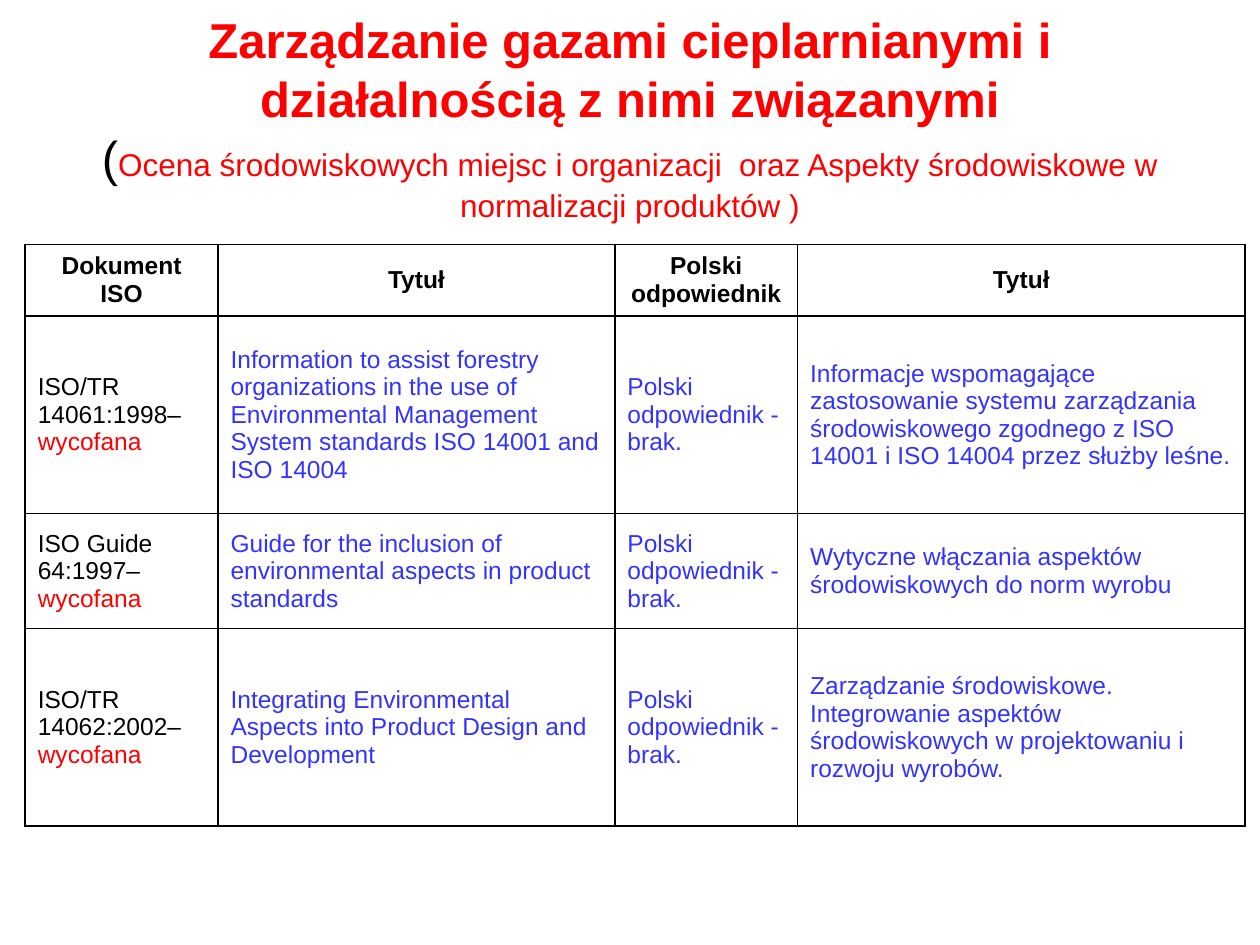
from lxml import etree
from pptx import Presentation
from pptx.dml.color import RGBColor
from pptx.enum.text import MSO_ANCHOR, PP_ALIGN
from pptx.oxml.ns import qn
from pptx.util import Inches, Pt

BLACK = RGBColor(0x00, 0x00, 0x00)
RED = RGBColor(0xFF, 0x00, 0x00)
BLUE = RGBColor(0x33, 0x33, 0xFF)
FONT = "Arial"

TITLE = "Zarządzanie gazami cieplarnianymi i działalnością z nimi związanymi"
SUBTITLE = ("Ocena środowiskowych miejsc i organizacji  oraz Aspekty "
            "środowiskowe w normalizacji produktów )")

HEADERS = ["Dokument ISO", "Tytuł", "Polski odpowiednik", "Tytuł"]
STATUS = "wycofana"
EQUIVALENT = "Polski odpowiednik - brak."
STANDARDS = [
    ("ISO/TR 14061:1998– ",
     "Information to assist forestry organizations in the use of Environmental "
     "Management System standards ISO 14001 and ISO 14004",
     "Informacje wspomagające zastosowanie systemu zarządzania środowiskowego "
     "zgodnego z ISO 14001 i ISO 14004 przez służby leśne."),
    ("ISO Guide 64:1997– ",
     "Guide for the inclusion of environmental aspects in product standards",
     "Wytyczne włączania aspektów środowiskowych do norm wyrobu"),
    ("ISO/TR 14062:2002– ",
     "Integrating Environmental Aspects into Product Design and Development",
     "Zarządzanie środowiskowe. Integrowanie aspektów środowiskowych "
     "w projektowaniu i rozwoju wyrobów."),
]
COLUMN_WIDTHS = [1.53, 3.15, 1.45, 3.55]
ROW_HEIGHTS = [0.44, 1.57, 0.91, 1.57]


def add_run(paragraph, text, size, color, bold=False):
    run = paragraph.add_run()
    run.text = text
    run.font.size = Pt(size)
    run.font.color.rgb = color
    run.font.bold = bold


def add_borders(cell):
    properties = cell._tc.get_or_add_tcPr()
    for index, side in enumerate(("a:lnL", "a:lnR", "a:lnT", "a:lnB")):
        line = etree.Element(qn(side), w=str(Pt(1)))
        fill = etree.SubElement(line, qn("a:solidFill"))
        etree.SubElement(fill, qn("a:srgbClr"), val=str(BLACK))
        properties.insert(index, line)


def fill_cell(cell, runs, bold=False, align=PP_ALIGN.LEFT):
    """Write (text, color) runs into a bordered, unfilled cell."""
    cell.fill.background()
    add_borders(cell)
    cell.vertical_anchor = MSO_ANCHOR.MIDDLE
    paragraph = cell.text_frame.paragraphs[0]
    paragraph.alignment = align
    paragraph.font.name = FONT
    for text, color in runs:
        add_run(paragraph, text, 14, color, bold)


def add_title(slide):
    box = slide.shapes.add_textbox(Inches(0.5), Inches(0.3), Inches(9), Inches(1.25))
    frame = box.text_frame
    frame.word_wrap = True
    frame.vertical_anchor = MSO_ANCHOR.MIDDLE
    heading = frame.paragraphs[0]
    heading.alignment = PP_ALIGN.CENTER
    heading.font.name = FONT
    add_run(heading, TITLE, 28, RED, bold=True)
    heading.add_line_break()
    add_run(heading, "(", 28, BLACK)
    add_run(heading, SUBTITLE, 18, RED)


def add_standards(slide):
    table = slide.shapes.add_table(
        len(ROW_HEIGHTS), len(COLUMN_WIDTHS), Inches(0.2), Inches(1.94),
        Inches(sum(COLUMN_WIDTHS)), Inches(sum(ROW_HEIGHTS))).table
    for column, width in zip(table.columns, COLUMN_WIDTHS):
        column.width = Inches(width)
    for row, height in zip(table.rows, ROW_HEIGHTS):
        row.height = Inches(height)
    for column, header in enumerate(HEADERS):
        fill_cell(table.cell(0, column), [(header, BLACK)], True, PP_ALIGN.CENTER)
    for row, (document, title, polish_title) in enumerate(STANDARDS, start=1):
        contents = [[(document, BLACK), (STATUS, RED)], [(title, BLUE)],
                    [(EQUIVALENT, BLUE)], [(polish_title, BLUE)]]
        for column, runs in enumerate(contents):
            fill_cell(table.cell(row, column), runs)


def main():
    presentation = Presentation()
    presentation.slide_width = Inches(10)
    presentation.slide_height = Inches(7.5)
    slide = presentation.slides.add_slide(presentation.slide_layouts[6])
    add_title(slide)
    add_standards(slide)
    presentation.save("out.pptx")


if __name__ == "__main__":
    main()
